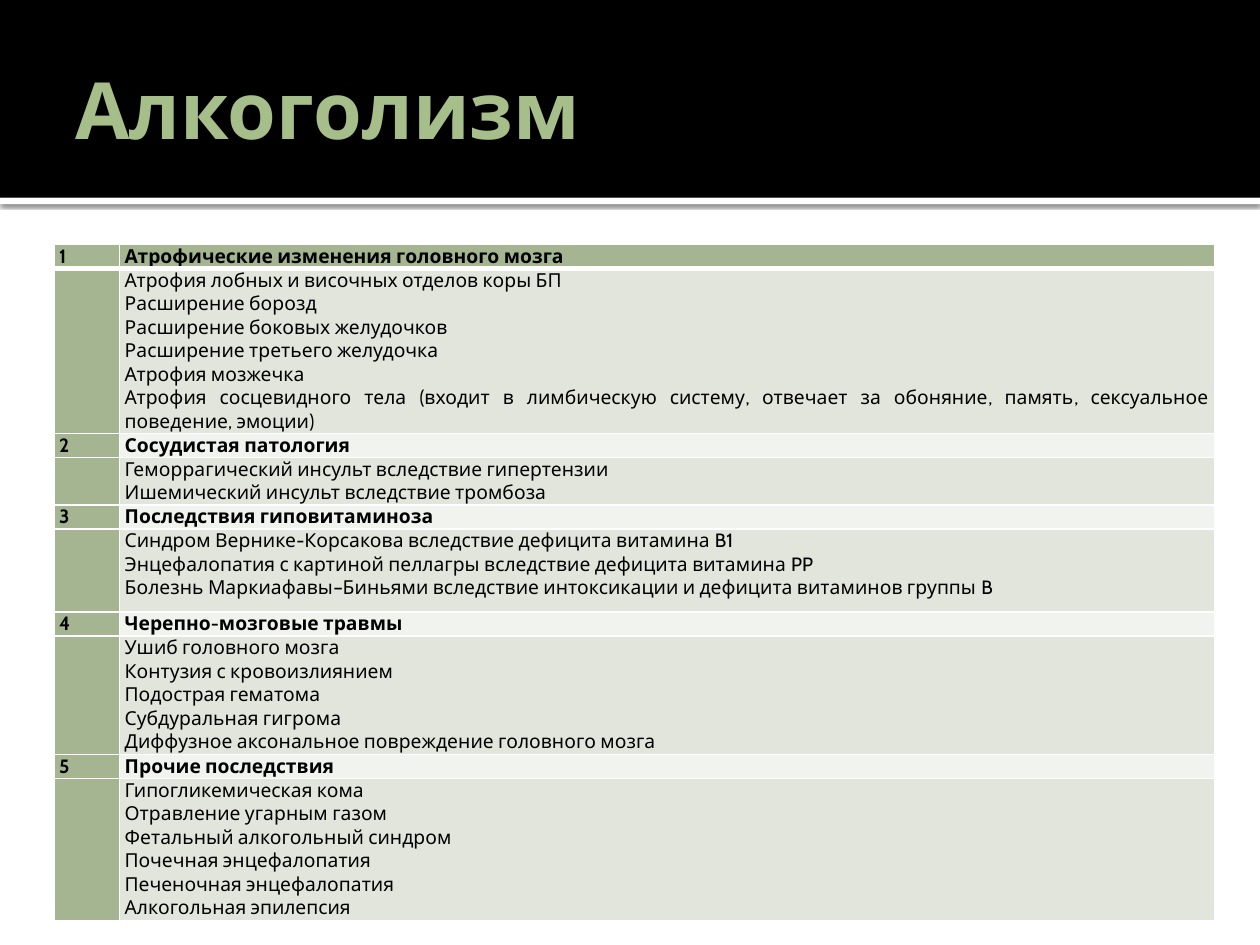
from lxml.etree import SubElement
from pptx import Presentation
from pptx.dml.color import RGBColor
from pptx.enum.shapes import MSO_SHAPE
from pptx.enum.text import MSO_ANCHOR, PP_ALIGN
from pptx.oxml.ns import qn
from pptx.util import Inches, Pt

BLACK = RGBColor(0x00, 0x00, 0x00)
WHITE = RGBColor(0xFF, 0xFF, 0xFF)
TITLE_GREEN = RGBColor(0xA6, 0xBE, 0x89)
GREEN = RGBColor(0xA5, 0xB5, 0x92)
DETAIL_GREEN = RGBColor(0xE1, 0xE5, 0xDC)
HEADING_GREEN = RGBColor(0xF0, 0xF3, 0xEE)
FONT = "Cabin"
HEADING_HEIGHT = 0.19

# Heading, height of the detail row, detail lines
SECTIONS = [
    ("Атрофические изменения головного мозга", 1.31, [
        "Атрофия лобных и височных отделов коры БП",
        "Расширение борозд",
        "Расширение боковых желудочков",
        "Расширение третьего желудочка",
        "Атрофия мозжечка",
        "Атрофия сосцевидного тела (входит в лимбическую систему, отвечает за "
        "обоняние, память, сексуальное поведение, эмоции)",
    ]),
    ("Сосудистая патология", 0.38, [
        "Геморрагический инсульт вследствие гипертензии",
        "Ишемический инсульт вследствие тромбоза",
    ]),
    ("Последствия гиповитаминоза", 0.66, [
        "Синдром Вернике-Корсакова вследствие дефицита витамина B1",
        "Энцефалопатия с картиной пеллагры вследствие дефицита витамина PP",
        "Болезнь Маркиафавы–Биньями вследствие интоксикации и дефицита "
        "витаминов группы B",
    ]),
    ("Черепно-мозговые травмы", 0.94, [
        "Ушиб головного мозга",
        "Контузия с кровоизлиянием",
        "Подострая гематома",
        "Субдуральная гигрома",
        "Диффузное аксональное повреждение головного мозга",
    ]),
    ("Прочие последствия", 1.13, [
        "Гипогликемическая кома",
        "Отравление угарным газом",
        "Фетальный алкогольный синдром",
        "Почечная энцефалопатия",
        "Печеночная энцефалопатия",
        "Алкогольная эпилепсия",
    ]),
]


def add_run(paragraph, text, size, color, bold):
    run = paragraph.add_run()
    run.text = text
    run.font.name = FONT
    run.font.size = Pt(size)
    run.font.bold = bold
    run.font.color.rgb = color


def format_cell(cell, lines, fill, bold, top, bottom):
    """Fill a cell with lines; top and bottom are border widths in points."""
    cell.margin_left = cell.margin_right = Inches(0.04)
    cell.margin_top = cell.margin_bottom = 0
    properties = cell._tc.get_or_add_tcPr()
    for side, width in (("lnL", 1), ("lnR", 1), ("lnT", top), ("lnB", bottom)):
        border = SubElement(properties, qn(f"a:{side}"), w=str(Pt(width)))
        solid = SubElement(border, qn("a:solidFill"))
        SubElement(solid, qn("a:srgbClr"), val=str(WHITE))
    cell.fill.solid()
    cell.fill.fore_color.rgb = fill
    for index, line in enumerate(lines):
        frame = cell.text_frame
        paragraph = frame.add_paragraph() if index else frame.paragraphs[0]
        paragraph.alignment = PP_ALIGN.JUSTIFY
        add_run(paragraph, line, 11, BLACK, bold)


presentation = Presentation()
presentation.slide_width = Inches(10)
presentation.slide_height = Inches(7.5)
slide = presentation.slides.add_slide(presentation.slide_layouts[6])

# Header band with a shadowed white strip under it
for top, height, color in ((1.57, 0.05, WHITE), (0, 1.57, BLACK)):
    band = slide.shapes.add_shape(
        MSO_SHAPE.RECTANGLE, 0, Inches(top), Inches(10), Inches(height))
    band.shadow.inherit = False
    band.fill.solid()
    band.fill.fore_color.rgb = color
    band.line.fill.background()
    if color == WHITE:
        effects = band._element.spPr.find(qn("a:effectLst"))
        shadow = SubElement(effects, qn("a:outerShdw"), blurRad=str(Pt(2.5)),
                            dist=str(Pt(0.8)), dir="5400000", algn="t",
                            rotWithShape="0")
        shadow_color = SubElement(shadow, qn("a:srgbClr"), val=str(BLACK))
        SubElement(shadow_color, qn("a:alpha"), val="60000")

title = slide.shapes.add_textbox(Inches(0.5), Inches(0.17), Inches(9), Inches(1.37))
title_frame = title.text_frame
title_frame.word_wrap = True
title_frame.vertical_anchor = MSO_ANCHOR.MIDDLE
title_frame.margin_left = Inches(0.1)
title_frame.margin_right = Inches(0.05)
add_run(title_frame.paragraphs[0], "Алкоголизм", 45, TITLE_GREEN, True)

# Each section takes a numbered heading row and a detail row
table_height = sum(HEADING_HEIGHT + height for _, height, _ in SECTIONS)
table = slide.shapes.add_table(
    2 * len(SECTIONS), 2, Inches(0.43), Inches(1.94),
    Inches(9.21), Inches(table_height)).table
table.columns[0].width = Inches(0.52)
table.columns[1].width = Inches(8.69)
for index, (heading, detail_height, details) in enumerate(SECTIONS):
    row = 2 * index
    table.rows[row].height = Inches(HEADING_HEIGHT)
    table.rows[row + 1].height = Inches(detail_height)
    divider = 1 if index else 3
    heading_fill = HEADING_GREEN if index else GREEN
    format_cell(table.cell(row, 0), [str(index + 1)], GREEN, True, 1, divider)
    format_cell(table.cell(row, 1), [heading], heading_fill, True, 1, divider)
    format_cell(table.cell(row + 1, 0), [], GREEN, False, divider, 1)
    format_cell(table.cell(row + 1, 1), details, DETAIL_GREEN, False, divider, 1)

presentation.save("out.pptx")
